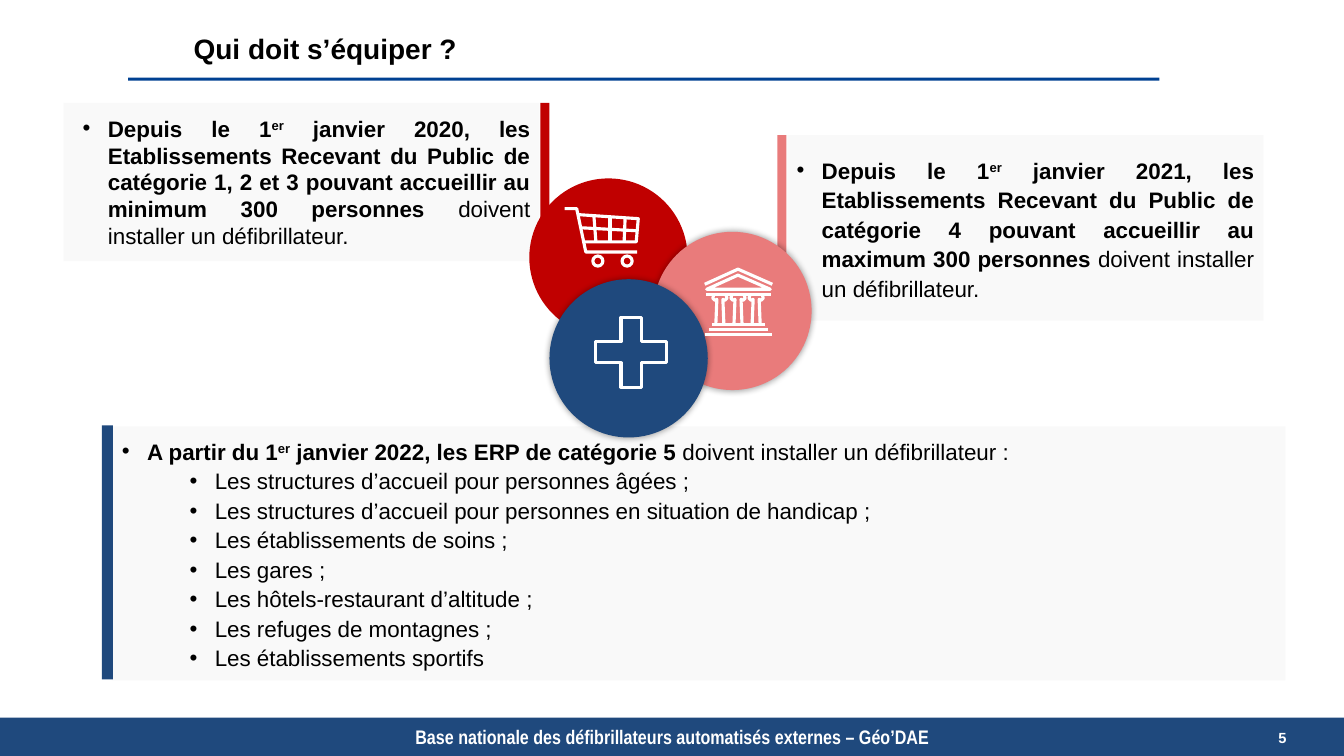
from lxml import etree
from pptx import Presentation, util as u
from pptx.dml.color import RGBColor
from pptx.enum import shapes, text
from pptx.oxml import parse_xml
from pptx.oxml.ns import nsdecls, qn

COLORS = {"navy": "1F497D", "rule": "004192", "red": "C00000", "pink": "E97B7B",
          "panel": "F9F9F9", "white": "FFFFFF", "black": "000000"}
RGB = {name: RGBColor.from_string(value) for name, value in COLORS.items()}
Inches = u.Inches
ALIGN = text.PP_ALIGN

presentation = Presentation()
presentation.slide_width, presentation.slide_height = Inches(13.33), Inches(7.5)
slide = presentation.slides.add_slide(presentation.slide_layouts.get_by_name("Comparison"))


def write(shape, place, paragraphs, insets=(0.1, 0.05, 0.1, 0.05)):
    """Place a text shape; each paragraph is (settings, indent, runs of (text, font settings))."""
    shape.left, shape.top, shape.width, shape.height = map(Inches, place)
    frame = shape.text_frame
    sides = zip(("left", "top", "right", "bottom"), insets)
    settings = {f"margin_{side}": Inches(inset) for side, inset in sides}
    settings |= {"word_wrap": True, "auto_size": text.MSO_AUTO_SIZE.NONE,
                 "vertical_anchor": text.MSO_ANCHOR.MIDDLE}
    for name, value in settings.items():
        setattr(frame, name, value)
    for index, (layout, indent, runs) in enumerate(paragraphs):
        paragraph = frame.add_paragraph() if index else frame.paragraphs[0]
        if indent:
            properties = paragraph._p.get_or_add_pPr()
            properties.set("marL", str(Inches(indent)))
            properties.set("indent", str(Inches(-0.25)))
            etree.SubElement(properties, qn("a:buFont")).set("typeface", "Arial")
            etree.SubElement(properties, qn("a:buChar")).set("char", "•")
        for name, value in ({"space_before": u.Pt(0)} | layout).items():
            setattr(paragraph, name, value)
        for words, font in runs:
            run = paragraph.add_run()
            run.text = words
            font = {"name": "Arial", "size": 16, "bold": False, "color": "black"} | font
            run.font.name, run.font.size, run.font.bold = font["name"], u.Pt(font["size"]), font["bold"]
            run.font.color.rgb = RGB[font["color"]]
            if font.get("superscript"):
                run._r.get_or_add_rPr().set("baseline", "30000")


def stroke(icon, points, closed=False):
    """Draw a white outline through points given in inches."""
    start, *rest = [(Inches(x), Inches(y)) for x, y in points]
    builder = icon.shapes.build_freeform(*start, scale=1.0)
    builder.add_line_segments(rest, close=closed)
    outline = builder.convert_to_shape()
    outline.shadow.inherit = False
    outline.fill.background()
    outline.line.color.rgb = RGB["white"]
    outline.line.width = u.Pt(2.25)


# Title and the three deadlines
write(slide.shapes.title, (1.79, 0.25, 9.29, 0.51),
      [({"alignment": ALIGN.LEFT, "line_spacing": 0.9}, 0,
        [("Qui doit s’équiper ?", {"size": 20, "bold": True})])], (0.13,) * 4)

structures = ["Les structures d’accueil pour personnes âgées ;",
              "Les structures d’accueil pour personnes en situation de handicap ;",
              "Les établissements de soins ;", "Les gares ;", "Les hôtels-restaurant d’altitude ;",
              "Les refuges de montagnes ;", "Les établissements sportifs"]
erp = "les Etablissements Recevant du Public de catégorie"
install = "doivent installer un défibrillateur"
deadlines = [
    (1, (0.63, 1.02, 4.72, 1.57), 1.0, 0.35, "Depuis le 1",
     f" janvier 2020, {erp} 1, 2 et 3 pouvant accueillir au minimum 300 personnes ",
     f"{install}.", [], (0.09, 0, 0.09, 0)),
    (2, (7.81, 1.34, 4.72, 1.84), 1.1, 0.25, "Depuis le 1",
     f" janvier 2021, {erp} 4 pouvant accueillir au maximum 300 personnes ",
     f"{install}.", [], (0.09, 0, 0.09, 0)),
    (3, (1.11, 4.23, 11.64, 2.52), 1.1, 0.25, "A partir du 1",
     " janvier 2022, les ERP de catégorie 5 ", f"{install} :", structures, (0.1, 0.05, 0.1, 0.05)),
]
for number, place, spacing, indent, opening, who, ending, items, insets in deadlines:
    panel = slide.placeholders[number]
    panel.fill.solid()
    panel.fill.fore_color.rgb = RGB["panel"]
    layout = {"alignment": ALIGN.JUSTIFY, "line_spacing": spacing}
    bold = {"bold": True}
    paragraphs = [(layout, indent, [(opening, bold), ("er", bold | {"superscript": True}),
                                    (who, bold), (ending, {})])]
    paragraphs += [(layout | {"level": 1}, 0.92, [(item, {})]) for item in items]
    write(panel, place, paragraphs, insets)
unused = slide.placeholders[4]._element
unused.getparent().remove(unused)

# Rules, side bars and circles
RECTANGLE, OVAL = shapes.MSO_SHAPE.RECTANGLE, shapes.MSO_SHAPE.OVAL
for kind, place, color, shadowed in [
    (RECTANGLE, (0, 7.12, 13.33, 0.39), "navy", False),
    (RECTANGLE, (1.27, 0.77, 10.23, 0.03), "rule", False),
    (RECTANGLE, (1.01, 4.22, 0.11, 2.52), "navy", False),
    (RECTANGLE, (5.36, 1.02, 0.09, 1.57), "red", False),
    (RECTANGLE, (7.71, 1.34, 0.09, 1.57), "pink", False),
    (OVAL, (5.25, 1.77, 1.57, 1.57), "red", False),
    (OVAL, (6.48, 2.3, 1.57, 1.57), "pink", True),
    (OVAL, (5.45, 2.77, 1.57, 1.57), "navy", True),
]:
    shape = slide.shapes.add_shape(kind, *map(Inches, place))
    shape.shadow.inherit = False
    shape.fill.solid()
    shape.fill.fore_color.rgb = RGB[color]
    shape.line.fill.background()
    if shadowed:
        shape._element.spPr.find(qn("a:effectLst")).append(parse_xml(
            f'<a:outerShdw {nsdecls("a")} blurRad="{u.Pt(5)}" dist="0" dir="0">'
            f'<a:srgbClr val="{COLORS["black"]}"><a:alpha val="40000"/></a:srgbClr></a:outerShdw>'))

# Footer
for place, alignment, words, font in [
    ((2.93, 7.2, 7.48, 0.22), ALIGN.CENTER,
     "Base nationale des défibrillateurs automatisés externes – Géo’DAE",
     {"name": "Arial Narrow", "size": 14}),
    ((10.79, 7.12, 1.97, 0.39), ALIGN.RIGHT, "5", {"size": 10.5}),
]:
    box = slide.shapes.add_textbox(0, 0, 0, 0)
    write(box, place, [({"alignment": alignment}, 0,
                        [(words, font | {"bold": True, "color": "white"})])], (0,) * 4)

# Shopping cart
cart = slide.shapes.add_group_shape()
for line in [
    [(5.6, 2.07), (5.72, 2.07), (5.81, 2.5), (6.32, 2.5)],
    [(5.74, 2.13), (6.33, 2.17), (6.31, 2.4), (5.8, 2.4)],
    [(5.76, 2.26), (6.32, 2.29)],
    [(5.89, 2.14), (5.91, 2.4)],
    [(6.05, 2.15), (6.05, 2.4)],
    [(6.2, 2.16), (6.19, 2.4)],
]:
    stroke(cart, line)
for wheel_left in (5.88, 6.17):
    wheel = cart.shapes.add_shape(OVAL, Inches(wheel_left), Inches(2.54), Inches(0.1), Inches(0.1))
    wheel.shadow.inherit = False
    wheel.fill.background()
    wheel.line.color.rgb = RGB["white"]
    wheel.line.width = u.Pt(2.25)

# Temple
temple = slide.shapes.add_group_shape()
stroke(temple, [(6.99, 2.82), (7.32, 2.67), (7.66, 2.82)])
stroke(temple, [(7.01, 2.87), (7.32, 2.73), (7.64, 2.87)], closed=True)
for left, right, y in [(7, 7.65, 2.92), (7.06, 7.59, 3.22), (7.03, 7.62, 3.27), (6.99, 7.66, 3.32)]:
    stroke(temple, [(left, y), (right, y)])
half_column = [(0.04, 3.22), (0.03, 2.97), (0.05, 2.98), (0.07, 2.96), (0.06, 2.92)]
for column in range(3):
    axis = 7.14 + 0.18 * column
    for side in (-1, 1):
        stroke(temple, [(axis + side * dx, y) for dx, y in half_column])

# Medical cross
x1, x2, x3, x4 = 5.91, 6.16, 6.36, 6.61
y1, y2, y3, y4 = 3.15, 3.39, 3.6, 3.84
stroke(slide, [(x2, y1), (x3, y1), (x3, y2), (x4, y2), (x4, y3), (x3, y3),
               (x3, y4), (x2, y4), (x2, y3), (x1, y3), (x1, y2), (x2, y2)], closed=True)

presentation.save("out.pptx")
